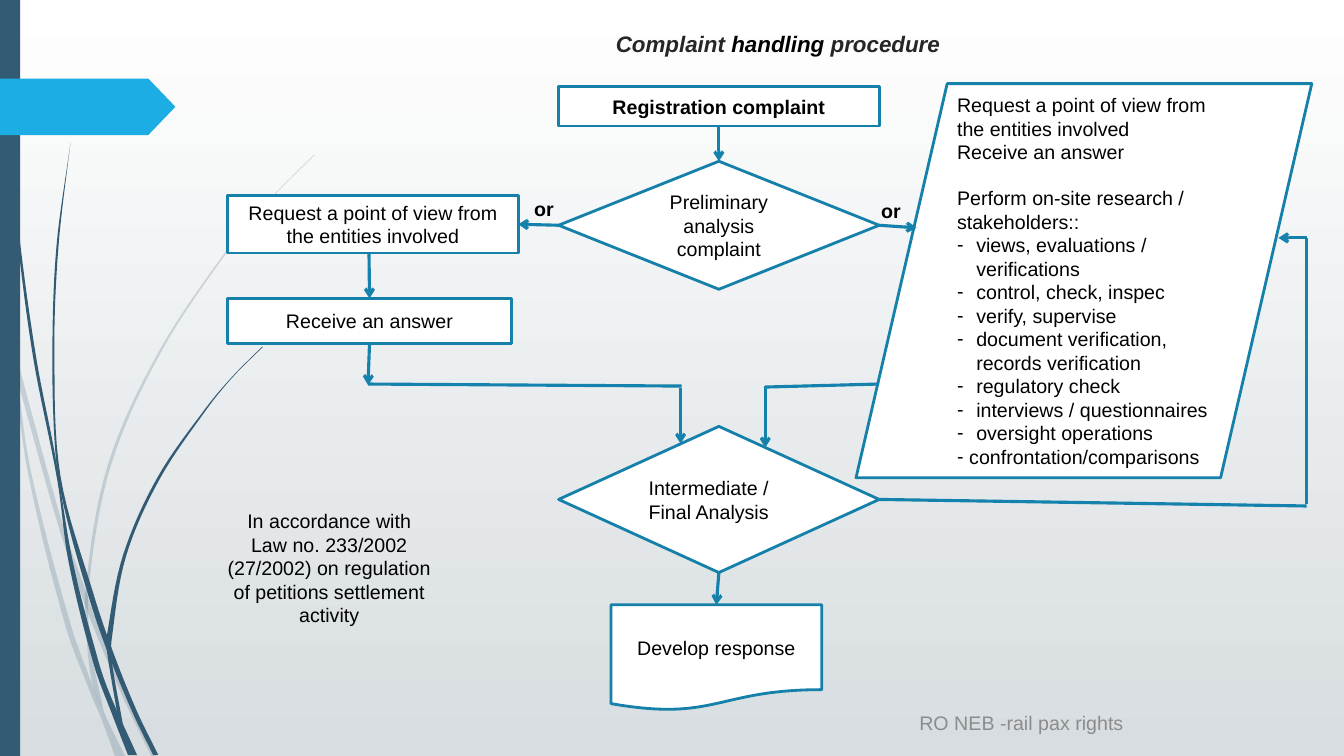
from itertools import accumulate

from lxml import etree
from pptx import Presentation
from pptx.dml.color import RGBColor
from pptx.enum.shapes import MSO_CONNECTOR, MSO_SHAPE
from pptx.enum.text import MSO_ANCHOR, PP_ALIGN
from pptx.oxml.ns import qn
from pptx.util import Emu, Pt

PX = 9144
STRAIGHT = MSO_CONNECTOR.STRAIGHT
RECTANGLE, DIAMOND, PENTAGON = MSO_SHAPE.RECTANGLE, MSO_SHAPE.DIAMOND, MSO_SHAPE.PENTAGON
PROCESS, DOCUMENT = MSO_SHAPE.FLOWCHART_PROCESS, MSO_SHAPE.FLOWCHART_DOCUMENT
DATA = MSO_SHAPE.FLOWCHART_DATA
LEFT, CENTER = PP_ALIGN.LEFT, PP_ALIGN.CENTER
TOP_ANCHOR, MIDDLE = MSO_ANCHOR.TOP, MSO_ANCHOR.MIDDLE
TOP, LEFT_SIDE, BOTTOM, RIGHT_SIDE = range(4)

BLACK = RGBColor(0x00, 0x00, 0x00)
CHARCOAL = RGBColor(0x26, 0x26, 0x26)
GRAY = RGBColor(0x8C, 0x8C, 0x8C)
WHITE = RGBColor(0xFF, 0xFF, 0xFF)
MIST = RGBColor(0xD7, 0xDD, 0xE0)
NAVY = RGBColor(0x33, 0x5B, 0x74)
SKY = RGBColor(0x1C, 0xAD, 0xE4)
BORDER = RGBColor(0x15, 0x80, 0xA9)
FLOW = RGBColor(0x14, 0x82, 0xAC)


def smooth(points, steps=8):
    """Return a dense curve that passes through the points."""
    knots = [complex(*point) for point in points]
    gaps = [abs(b - a) for a, b in zip(knots, knots[1:])]
    times = list(accumulate(gaps, initial=0))
    last = len(knots) - 1
    slopes = []
    for i in range(last + 1):
        before, after = max(i - 1, 0), min(i + 1, last)
        slopes.append((knots[after] - knots[before]) / (times[after] - times[before]))
    curve = []
    for i, gap in enumerate(gaps):
        for step in range(steps):
            t = step / steps
            curve.append(knots[i] * (1 + 2 * t) * (1 - t) ** 2
                         + knots[i + 1] * t * t * (3 - 2 * t)
                         + gap * t * (1 - t) * (slopes[i] * (1 - t) - slopes[i + 1] * t))
    return [(z.real * PX, z.imag * PX) for z in curve + [knots[-1]]]


class FlowSlide:
    """Draws flowchart elements on one slide in a shared style."""

    def __init__(self, slide, font="Arial", size=14):
        self.slide, self.shapes = slide, slide.shapes
        self.font, self.size = font, size

    def background(self, top, bottom):
        fill = self.slide.background.fill
        fill.gradient()
        fill.gradient_angle = 270
        for stop, position, color in zip(fill.gradient_stops, (0, 1), (top, bottom)):
            stop.position, stop.color.rgb = position, color

    def style(self, paragraph, color=BLACK, bold=False, align=CENTER):
        paragraph.alignment = align
        font = paragraph.font
        font.name, font.size, font.bold = self.font, Pt(self.size), bold
        font.color.rgb = color

    def plain(self, kind, box, fill):
        shape = self.shapes.add_shape(kind, *(Emu(n * PX) for n in box))
        shape.shadow.inherit = False
        shape.fill.solid()
        shape.fill.fore_color.rgb = fill
        shape.line.fill.background()
        return shape

    def node(self, kind, box, text="", bold=False, align=CENTER):
        shape = self.plain(kind, box, WHITE)
        shape.line.color.rgb = BORDER
        shape.line.width = Pt(2)
        frame = shape.text_frame
        frame.word_wrap, frame.vertical_anchor = True, MIDDLE
        frame.paragraphs[0].text = text
        self.style(frame.paragraphs[0], bold=bold, align=align)
        return shape

    def listing(self, shape, lines):
        frame = shape.text_frame
        for i, (text, indent, gap) in enumerate(lines):
            paragraph = frame.paragraphs[0] if i == 0 else frame.add_paragraph()
            paragraph.text = text
            if indent:
                props = paragraph._p.get_or_add_pPr()
                props.set("marL", str(indent * PX))
                props.set("indent", str(-indent * PX))
                etree.SubElement(props, qn("a:buFont"), typeface=self.font)
                etree.SubElement(props, qn("a:buChar"), char="-")
            if gap:
                paragraph.space_before = Pt(gap)
            self.style(paragraph, align=LEFT)

    def label(self, box, text="", color=BLACK, bold=False, align=LEFT, anchor=TOP_ANCHOR):
        frame = self.shapes.add_textbox(*(Emu(n * PX) for n in box)).text_frame
        frame.word_wrap, frame.vertical_anchor = True, anchor
        paragraph = frame.paragraphs[0]
        paragraph.text = text
        self.style(paragraph, color, bold, align)
        return paragraph

    def title(self, box, parts, size):
        paragraph = self.label(box, bold=True, align=CENTER)
        paragraph.font.size, paragraph.font.italic = Pt(size), True
        for text, color in parts:
            run = paragraph.add_run()
            run.text = text
            run.font.color.rgb = color

    def flow(self, start, end, arrow=True):
        points = [(0, 0) if hasattr(p[0], "shape_id") else p for p in (start, end)]
        link = self.shapes.add_connector(
            STRAIGHT, *(Emu(n * PX) for point in points for n in point))
        for place, join in ((start, link.begin_connect), (end, link.end_connect)):
            if hasattr(place[0], "shape_id"):
                join(*place)
        link.line.color.rgb = FLOW
        link.line.width = Pt(2.25)
        props = link._element.spPr
        if arrow:
            etree.SubElement(props.find(qn("a:ln")), qn("a:tailEnd"), type="arrow")
        etree.SubElement(props, qn("a:effectLst"))

    def strand(self, outer, inner, opacity):
        outline = smooth(outer) + smooth(inner)
        builder = self.shapes.build_freeform(*outline[0], scale=1.0)
        builder.add_line_segments(outline[1:], close=True)
        shape = builder.convert_to_shape()
        shape.shadow.inherit = False
        shape.fill.solid()
        shape.fill.fore_color.rgb = NAVY
        if opacity < 100:
            color = shape._element.spPr.find(".//" + qn("a:srgbClr"))
            etree.SubElement(color, qn("a:alpha"), val=str(opacity * 1000))
        shape.line.fill.background()


STRANDS = [
    (20, [(0, 282), (9, 322), (17, 376), (31, 469), (70, 619), (93, 683), (105, 711), (124, 750)],
     [(114, 750), (101, 714), (92, 693), (65, 621), (28, 470), (11, 350), (0, 299)]),
    (20, [(14, 345), (62, 520), (85, 586), (92, 607), (127, 692), (155, 750)],
     [(150, 750), (123, 694), (88, 610), (58, 522), (17, 376)]),
    (20, [(312, 153), (268, 197), (228, 244), (158, 348), (107, 461), (85, 584), (87, 646),
          (93, 683), (105, 711)],
     [(103, 706), (91, 646), (88, 584), (110, 462), (160, 349), (229, 245), (268, 198),
      (312, 154)]),
    (100, [(4, 0), (8, 109), (19, 232), (36, 355), (55, 453), (72, 556), (98, 657), (110, 691),
           (136, 749)],
     [(127, 749), (111, 708), (93, 659), (68, 557), (57, 477), (33, 355), (17, 233), (7, 110),
      (3, 0)]),
    (100, [(70, 141), (58, 245), (54, 349), (60, 472), (93, 590), (113, 649), (136, 706),
           (157, 749)],
     [(152, 749), (132, 708), (106, 645), (88, 592), (64, 505), (55, 449), (52, 349), (56, 245),
      (70, 141.5)]),
    (100, [(261, 344), (231, 374), (205, 406), (158, 476), (125, 552), (111, 633), (111, 656),
           (122, 719)],
     [(116, 706), (106, 645), (106, 631), (122, 551), (156, 474), (204, 405), (231, 373),
      (260, 344)]),
]

RESEARCH = [
    ("Request a point of view from the entities involved", 0, 0),
    ("Receive an answer", 0, 0),
    ("Perform on-site research / stakeholders::", 0, 16),
    ("views, evaluations / verifications", 19, 0),
    ("control, check, inspec", 19, 0),
    ("verify, supervise", 19, 0),
    ("document verification, records verification", 19, 0),
    ("regulatory check", 19, 0),
    ("interviews / questionnaires", 19, 0),
    ("oversight operations", 19, 0),
    ("confrontation/comparisons", 12, 0),
]


def main():
    deck = Presentation()
    deck.slide_width, deck.slide_height = Emu(1333 * PX), Emu(750 * PX)
    page = FlowSlide(deck.slides.add_slide(deck.slide_layouts[6]))
    page.background(WHITE, MIST)
    for opacity, outer, inner in STRANDS:
        page.strand(outer, inner, opacity)
    page.plain(RECTANGLE, (0, 0, 20, 750), NAVY)
    page.plain(PENTAGON, (0, 78, 174, 56), SKY).adjustments[0] = 0.48
    page.title((284, 25, 975, 35), [("Complaint ", CHARCOAL), ("handling ", BLACK),
                                    ("procedure", CHARCOAL)], 16)

    registration = page.node(PROCESS, (554, 86, 318, 39), "Registration complaint", bold=True)
    preliminary = page.node(DIAMOND, (554, 160, 318, 127), "Preliminary analysis\ncomplaint")
    request = page.node(PROCESS, (226, 194, 288, 57),
                        "Request a point of view from the entities involved")
    answer = page.node(RECTANGLE, (226, 296, 281, 45), "Receive an answer")
    final = page.node(DIAMOND, (554, 423, 318, 145), "Intermediate / Final Analysis", align=LEFT)
    response = page.node(DOCUMENT, (606, 600, 209, 105), "Develop response")
    page.listing(page.node(DATA, (849, 83, 452, 391)), RESEARCH)

    page.flow((registration, BOTTOM), (preliminary, TOP))
    page.flow((preliminary, LEFT_SIDE), (request, RIGHT_SIDE))
    page.flow((preliminary, RIGHT_SIDE), (909, 226))
    page.flow((366, 251), (answer, TOP))
    page.flow((answer, BOTTOM), (365, 382))
    page.flow((365, 381), (676, 383), arrow=False)
    page.flow((675, 385), (675, 440))
    page.flow((759, 384), (872, 381), arrow=False)
    page.flow((759, 383), (759, 444))
    page.flow((final, BOTTOM), (response, TOP))
    page.flow((final, RIGHT_SIDE), (1296, 502), arrow=False)
    page.flow((1296, 500), (1296, 236), arrow=False)
    page.flow((1296, 236), (1268, 236))

    page.label((520, 190, 51, 34), "or", bold=True)
    page.label((864, 192, 51, 34), "or", bold=True)
    page.label((214, 500, 225, 128), "In accordance with\nLaw no. 233/2002 (27/2002) on regulation "
               "of petitions settlement activity", align=CENTER)
    page.label((902, 697, 243, 40), "RO NEB -rail pax rights", GRAY, anchor=MIDDLE)
    deck.save("out.pptx")


if __name__ == "__main__":
    main()
